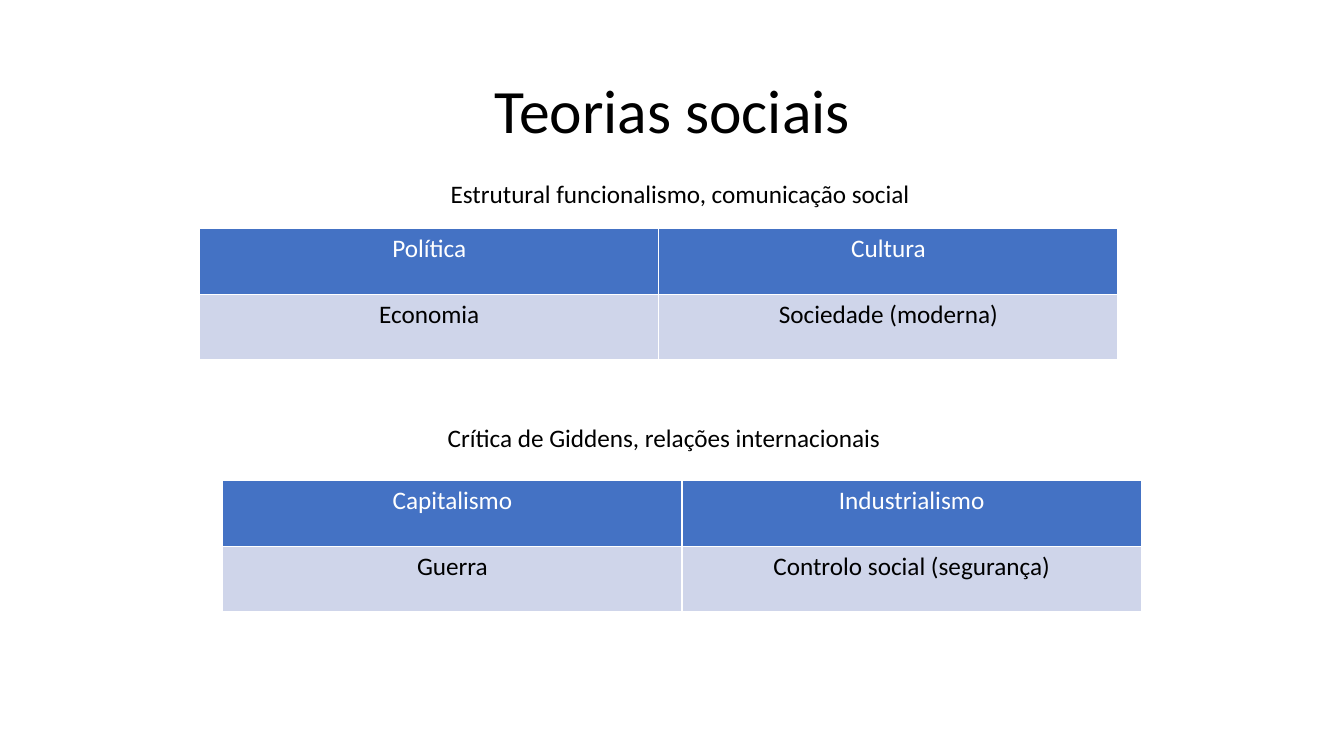
from pptx import Presentation
from pptx.dml.color import RGBColor
from pptx.enum.text import MSO_ANCHOR, MSO_AUTO_SIZE, PP_ALIGN
from pptx.util import Inches, Pt

BLACK = RGBColor(0x00, 0x00, 0x00)
WHITE = RGBColor(0xFF, 0xFF, 0xFF)
HEADER_BLUE = RGBColor(0x44, 0x72, 0xC4)
BODY_BLUE = RGBColor(0xCF, 0xD5, 0xEA)


class TheorySlide:
    """Hold the text style and the slide, and add each kind of element."""

    font_name = "Calibri"
    title_size = 44
    text_size = 18

    def __init__(self, presentation):
        self.slide = presentation.slides.add_slide(presentation.slide_layouts[5])

    def set_text(self, text_frame, text, size, color):
        text_frame.text = text
        paragraph = text_frame.paragraphs[0]
        paragraph.alignment = PP_ALIGN.CENTER
        font = paragraph.runs[0].font
        font.name = self.font_name
        font.size = Pt(size)
        font.bold = False
        font.color.rgb = color
        return paragraph

    def add_title(self, text, left, top, width, height):
        title = self.slide.shapes.title
        title.left, title.top = Inches(left), Inches(top)
        title.width, title.height = Inches(width), Inches(height)
        title.text_frame.vertical_anchor = MSO_ANCHOR.MIDDLE
        paragraph = self.set_text(title.text_frame, text, self.title_size, BLACK)
        paragraph.line_spacing = 0.9

    def add_caption(self, text, left, top):
        shape = self.slide.shapes.add_textbox(
            Inches(left), Inches(top), Inches(7.19), Inches(0.4))
        shape.text_frame.word_wrap = True
        shape.text_frame.auto_size = MSO_AUTO_SIZE.SHAPE_TO_FIT_TEXT
        self.set_text(shape.text_frame, text, self.text_size, BLACK)

    def add_table(self, rows, left, top):
        table = self.slide.shapes.add_table(
            len(rows), len(rows[0]), Inches(left), Inches(top),
            Inches(9.11), Inches(1.3)).table
        for row_index, row in enumerate(rows):
            fill, color = (BODY_BLUE, BLACK) if row_index else (HEADER_BLUE, WHITE)
            for column_index, text in enumerate(row):
                cell = table.cell(row_index, column_index)
                cell.fill.solid()
                cell.fill.fore_color.rgb = fill
                self.set_text(cell.text_frame, text, self.text_size, color)


def main():
    presentation = Presentation()
    presentation.slide_width = Inches(13.33)
    presentation.slide_height = Inches(7.5)

    theories = TheorySlide(presentation)
    theories.add_title("Teorias sociais", 0.92, 0.4, 11.5, 1.45)
    theories.add_table(
        [["Política", "Cultura"], ["Economia", "Sociedade (moderna)"]], 1.98, 2.27)
    theories.add_caption("Estrutural funcionalismo, comunicação social", 3.15, 1.72)
    theories.add_caption("Crítica de Giddens, relações internacionais", 2.99, 4.14)
    theories.add_table(
        [["Capitalismo", "Industrialismo"], ["Guerra", "Controlo social (segurança)"]],
        2.21, 4.77)

    presentation.save("out.pptx")


if __name__ == "__main__":
    main()
